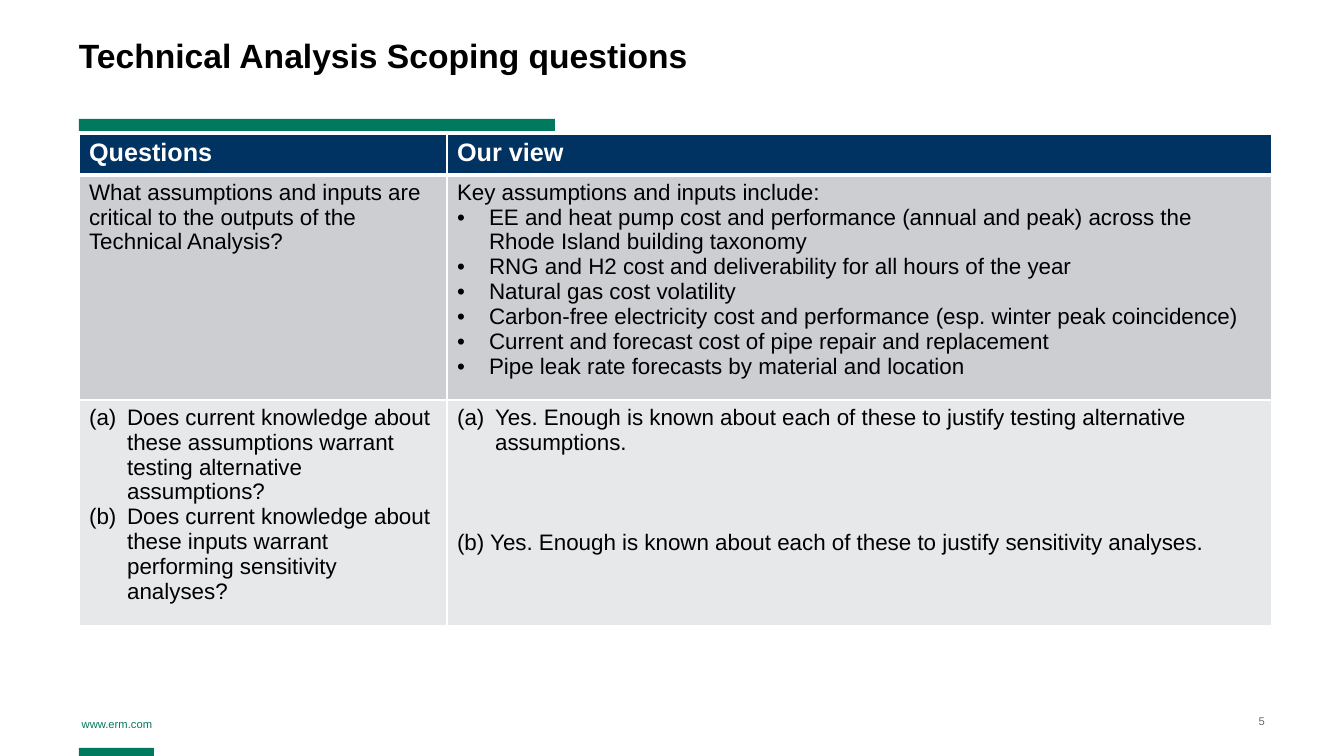
import dataclasses

import pptx
import pptx.dml.color
import pptx.enum.shapes
import pptx.enum.text
import pptx.oxml.ns
import pptx.util
from lxml import etree

PX = 914400 / 100.8
ALIGN = pptx.enum.text.PP_ALIGN
ANCHOR = pptx.enum.text.MSO_ANCHOR


@dataclasses.dataclass(frozen=True)
class Theme:
    font: str = "Arial"
    green: str = "00795F"
    navy: str = "003361"
    band_dark: str = "CCCED2"
    band_light: str = "E7E8EA"
    grey: str = "666D71"
    black: str = "000000"
    white: str = "FFFFFF"
    title: int = 24
    header: int = 18
    body: int = 16
    footer: int = 8


THEME = Theme()


@dataclasses.dataclass(frozen=True)
class Box:
    x: int
    y: int
    w: int
    h: int

    def emu(self) -> list[int]:
        return [px(v) for v in (self.x, self.y, self.w, self.h)]


@dataclasses.dataclass(frozen=True)
class Style:
    size: int
    color: str
    bold: bool = False


@dataclasses.dataclass(frozen=True)
class Label:
    box: Box
    text: str
    style: Style
    align: ALIGN = ALIGN.LEFT
    anchor: ANCHOR = ANCHOR.TOP
    spacing: float = 1.0


@dataclasses.dataclass(frozen=True)
class Para:
    text: str
    marker: str = ""
    before: float = 0


@dataclasses.dataclass(frozen=True)
class Row:
    height: int
    fill: str
    style: Style
    top: int
    bottom: int
    cells: list[list[Para]]


BULLET, LETTER = "bullet", "letter"
INDENTS = {BULLET: 32, LETTER: 38}

BARS = [Box(79, 748, 75, 8), Box(79, 119, 476, 12)]

LABELS = [
    Label(Box(79, 717, 76, 13), "www.erm.com", Style(THEME.footer, THEME.green), ALIGN.CENTER),
    Label(Box(1235, 715, 30, 13), "5", Style(THEME.footer, THEME.grey), ALIGN.RIGHT, ANCHOR.BOTTOM),
    Label(Box(79, 39, 1038, 80), "Technical Analysis Scoping questions",
          Style(THEME.title, THEME.black, True), spacing=0.9),
]

HEADER = Style(THEME.header, THEME.white, True)
BODY = Style(THEME.body, THEME.black)
TABLE_X, TABLE_Y = 79, 134
COLUMNS = [368, 825]
ROWS = [
    Row(41, THEME.navy, HEADER, 1, 3, [[Para("Questions")], [Para("Our view")]]),
    Row(209, THEME.band_dark, BODY, 3, 1, [
        [Para("What assumptions and inputs are critical to the outputs of the Technical Analysis?")],
        [
            Para("Key assumptions and inputs include:"),
            Para("EE and heat pump cost and performance (annual and peak) across the "
                 "Rhode Island building taxonomy", BULLET),
            Para("RNG and H2 cost and deliverability for all hours of the year", BULLET),
            Para("Natural gas cost volatility", BULLET),
            Para("Carbon-free electricity cost and performance (esp. winter peak coincidence)", BULLET),
            Para("Current and forecast cost of pipe repair and replacement", BULLET),
            Para("Pipe leak rate forecasts by material and location", BULLET),
        ],
    ]),
    Row(209, THEME.band_light, BODY, 1, 1, [
        [
            Para("Does current knowledge about these assumptions warrant testing "
                 "alternative assumptions?", LETTER),
            Para("Does current knowledge about these inputs warrant performing "
                 "sensitivity analyses?", LETTER),
        ],
        [
            Para("Yes. Enough is known about each of these to justify testing "
                 "alternative assumptions.", LETTER),
            Para("(b) Yes. Enough is known about each of these to justify sensitivity analyses.",
                 before=53.6),
        ],
    ]),
]


def px(n: int) -> int:
    return round(n * PX)


def rgb(color: str) -> pptx.dml.color.RGBColor:
    return pptx.dml.color.RGBColor.from_string(color)


def add_sub(parent, tag: str, **attrs: str):
    return etree.SubElement(parent, pptx.oxml.ns.qn(tag), attrs)


def set_font(p, style: Style) -> None:
    p.font.name = THEME.font
    p.font.size = pptx.util.Pt(style.size)
    p.font.bold = style.bold
    p.font.color.rgb = rgb(style.color)


def add_bar(s, box: Box) -> None:
    sp = s.shapes.add_shape(pptx.enum.shapes.MSO_SHAPE.RECTANGLE, *box.emu())
    sp.shadow.inherit = False
    sp.fill.solid()
    sp.fill.fore_color.rgb = rgb(THEME.green)
    sp.line.fill.background()


def add_label(s, label: Label) -> None:
    tf = s.shapes.add_textbox(*label.box.emu()).text_frame
    tf.margin_left = tf.margin_top = tf.margin_right = tf.margin_bottom = 0
    tf.word_wrap = True
    tf.vertical_anchor = label.anchor
    p = tf.paragraphs[0]
    p.text = label.text
    p.alignment = label.align
    p.line_spacing = label.spacing
    set_font(p, label.style)


def set_marker(p, marker: str) -> None:
    pPr = p._p.get_or_add_pPr()
    indent = px(INDENTS[marker])
    pPr.set("marL", str(indent))
    pPr.set("indent", str(-indent))
    if marker == BULLET:
        add_sub(pPr, "a:buFont", typeface=THEME.font)
        add_sub(pPr, "a:buChar", char="•")
    else:
        add_sub(pPr, "a:buAutoNum", type="alphaLcParenBoth")


def set_borders(cell, row: Row) -> None:
    tcPr = cell._tc.get_or_add_tcPr()
    for side, width in (("L", 1), ("R", 1), ("T", row.top), ("B", row.bottom)):
        ln = add_sub(tcPr, f"a:ln{side}", w=str(pptx.util.Pt(width)))
        add_sub(add_sub(ln, "a:solidFill"), "a:srgbClr", val=THEME.white)


def fill_cell(cell, row: Row, paras: list[Para]) -> None:
    set_borders(cell, row)
    cell.fill.solid()
    cell.fill.fore_color.rgb = rgb(row.fill)
    tf = cell.text_frame
    for i, para in enumerate(paras):
        p = tf.add_paragraph() if i else tf.paragraphs[0]
        p.text = para.text
        if para.before:
            p.space_before = pptx.util.Pt(para.before)
        if para.marker:
            set_marker(p, para.marker)
        set_font(p, row.style)


def add_questions(s) -> None:
    box = Box(TABLE_X, TABLE_Y, sum(COLUMNS), sum(row.height for row in ROWS))
    table = s.shapes.add_table(len(ROWS), len(COLUMNS), *box.emu()).table
    table.horz_banding = False
    for column, width in zip(table.columns, COLUMNS):
        column.width = px(width)
    for i, row in enumerate(ROWS):
        table.rows[i].height = px(row.height)
        for j, paras in enumerate(row.cells):
            fill_cell(table.cell(i, j), row, paras)


def main() -> None:
    prs = pptx.Presentation()
    prs.slide_width, prs.slide_height = px(1344), px(756)
    s = prs.slides.add_slide(prs.slide_layouts[6])
    for box in BARS:
        add_bar(s, box)
    for label in LABELS:
        add_label(s, label)
    add_questions(s)
    prs.save("out.pptx")


if __name__ == "__main__":
    main()
